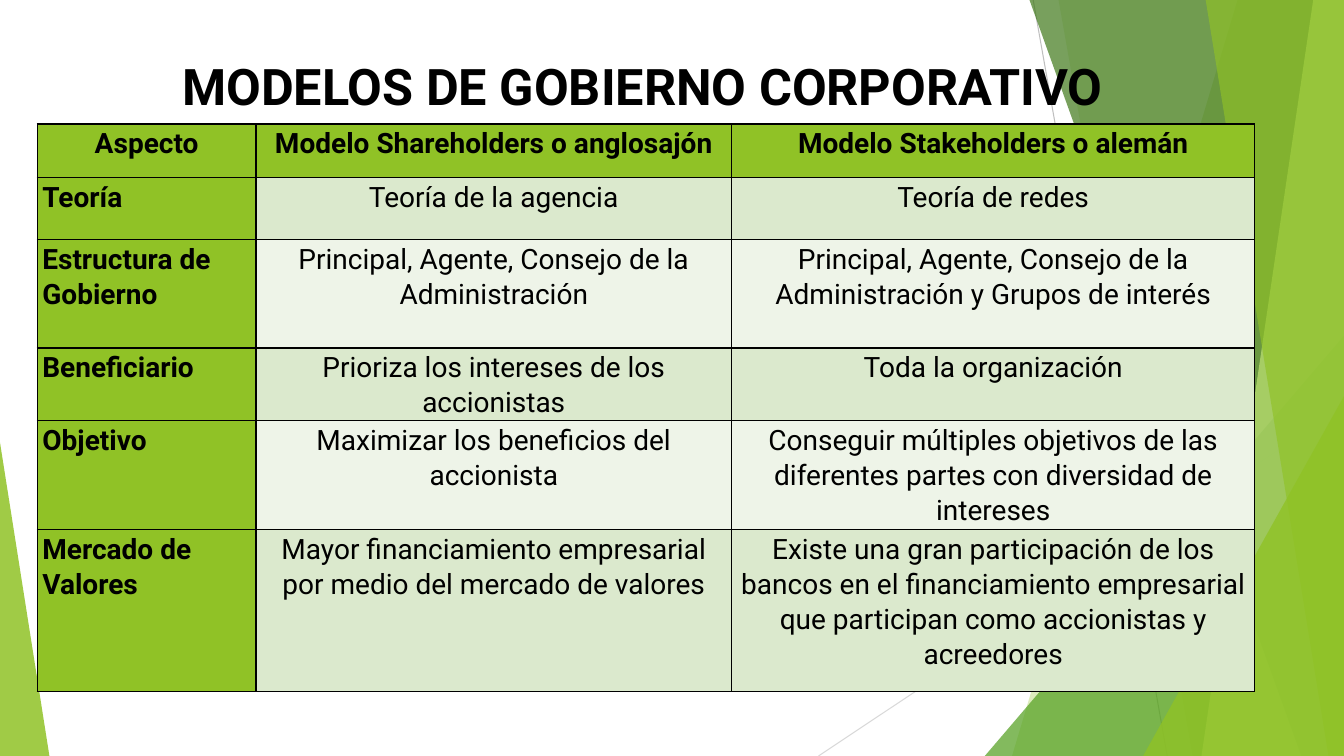
from dataclasses import dataclass
from typing import Optional, Union

from lxml import etree
from pptx import Presentation
from pptx import util as u
from pptx.dml.color import RGBColor
from pptx.enum import shapes, text
from pptx.oxml import ns


@dataclass(frozen=True)
class Theme:
    font: str = "Roboto"
    title_size: float = 36
    table_size: float = 20
    ink: str = "000000"
    green: str = "90C226"
    mid_green: str = "54A021"
    dark_green: str = "3F7819"
    light_green: str = "C0E474"
    row_tints: tuple[str, str] = ("DBE9CD", "EEF4E8")
    line_greys: tuple[str, str] = ("BFBFBF", "D9D9D9")


@dataclass(frozen=True)
class Band:
    """Four-sided facet that runs from top to bottom along the right edge."""
    top_x: float
    bottom_x: float
    color: str
    opacity: int


@dataclass(frozen=True)
class Wedge:
    """Triangle that stands on the bottom edge; apex is 0 (left) to 1 (right)."""
    left: float
    top: float
    width: float
    apex: float
    color: str
    opacity: int


@dataclass(frozen=True)
class Line:
    start: tuple[float, float]
    end: tuple[float, float]
    color: str


THEME = Theme()
WIDTH, HEIGHT = 960, 540
BAND_TOP = -0.72

LINES = [
    Line((738, 0), (833.76, HEIGHT), THEME.line_greys[0]),
    Line((WIDTH, 290.16), (584.64, HEIGHT), THEME.line_greys[1]),
]
FACETS: list[Union[Band, Wedge]] = [
    Band(884.16, 722.88, THEME.green, 30),
    Band(756, 851.76, THEME.green, 20),
    Wedge(703.44, 239.76, 256.56, 1, THEME.mid_green, 72),
    Band(735.12, 929.52, THEME.dark_green, 70),
    Band(938.16, 858.24, THEME.light_green, 70),
    Band(861.12, 948.96, THEME.green, 65),
    Wedge(816.48, 282.96, 143.52, 1, THEME.green, 80),
    Wedge(0, 316.08, 35.28, 0, THEME.green, 85),
]

TABLE_LEFT, TABLE_TOP = 26.64, 88.56
COLUMN_WIDTHS = [156.24, 339.84, 373.68]
ROW_HEIGHTS = [38.4, 44.4, 77.2, 51, 77.2, 115.8]
ROWS = [
    ("Aspecto", "Modelo Shareholders o anglosajón", "Modelo Stakeholders o alemán"),
    ("Teoría", "Teoría de la agencia", "Teoría de redes"),
    ("Estructura de Gobierno",
     "Principal, Agente, Consejo de la Administración",
     "Principal, Agente, Consejo de la Administración y Grupos de interés"),
    ("Beneficiario", "Prioriza los intereses de los accionistas", "Toda la organización"),
    ("Objetivo",
     "Maximizar los beneficios del accionista",
     "Conseguir múltiples objetivos de las diferentes partes con diversidad de intereses"),
    ("Mercado de Valores",
     "Mayor financiamiento empresarial por medio del mercado de valores",
     "Existe una gran participación de los bancos en el financiamiento empresarial "
     "que participan como accionistas y acreedores"),
]


def write_text(frame, content: str, *, size: float, bold: bool = False,
               align=text.PP_ALIGN.LEFT, spacing: Optional[float] = None,
               after: float = 0) -> None:
    frame.word_wrap = True
    paragraph = frame.paragraphs[0]
    paragraph.alignment = align
    paragraph.space_after = u.Pt(after)
    if spacing:
        paragraph.line_spacing = spacing
    run = paragraph.add_run()
    run.text = content
    run.font.name = THEME.font
    run.font.size = u.Pt(size)
    run.font.bold = bold
    run.font.color.rgb = RGBColor.from_string(THEME.ink)


def draw_line(slide, line: Line) -> None:
    connector = slide.shapes.add_connector(
        shapes.MSO_CONNECTOR.STRAIGHT, *(u.Pt(value) for value in line.start + line.end))
    connector.line.color.rgb = RGBColor.from_string(line.color)
    connector.line.width = u.Pt(0.75)
    properties = connector._element.find(ns.qn("p:spPr"))
    etree.SubElement(properties, ns.qn("a:effectLst"))


def draw_facet(slide, facet: Union[Band, Wedge]) -> None:
    if isinstance(facet, Band):
        corners = [(facet.top_x, BAND_TOP), (WIDTH, BAND_TOP),
                   (WIDTH, HEIGHT), (facet.bottom_x, HEIGHT)]
        points = [(u.Pt(x), u.Pt(y)) for x, y in corners]
        builder = slide.shapes.build_freeform(*points[0])
        builder.add_line_segments(points[1:], close=True)
        shape = builder.convert_to_shape()
    else:
        shape = slide.shapes.add_shape(
            shapes.MSO_SHAPE.ISOSCELES_TRIANGLE, u.Pt(facet.left), u.Pt(facet.top),
            u.Pt(facet.width), u.Pt(HEIGHT - facet.top))
        shape.adjustments[0] = facet.apex
    shape.shadow.inherit = False
    shape.line.fill.background()
    shape.fill.solid()
    shape.fill.fore_color.rgb = RGBColor.from_string(facet.color)
    color = shape._element.find(".//" + ns.qn("a:srgbClr"))
    etree.SubElement(color, ns.qn("a:alpha"), val=str(facet.opacity * 1000))


def draw_title(slide) -> None:
    title = slide.shapes.add_textbox(u.Pt(123.12), u.Pt(36), u.Pt(676.8), u.Pt(103.68))
    write_text(title.text_frame, "MODELOS DE GOBIERNO CORPORATIVO",
               size=THEME.title_size, bold=True)


def add_borders(cell) -> None:
    properties = cell._tc.get_or_add_tcPr()
    for index, side in enumerate(("lnL", "lnR", "lnT", "lnB")):
        border = etree.Element(ns.qn("a:" + side), w=str(u.Pt(1)))
        fill = etree.SubElement(border, ns.qn("a:solidFill"))
        etree.SubElement(fill, ns.qn("a:srgbClr"), val=THEME.ink)
        properties.insert(index, border)


def draw_table(slide) -> None:
    table = slide.shapes.add_table(
        len(ROWS), len(COLUMN_WIDTHS), u.Pt(TABLE_LEFT), u.Pt(TABLE_TOP),
        u.Pt(sum(COLUMN_WIDTHS)), u.Pt(sum(ROW_HEIGHTS))).table
    table.horz_banding = False
    for column, width in zip(table.columns, COLUMN_WIDTHS):
        column.width = u.Pt(width)
    for r, (contents, height) in enumerate(zip(ROWS, ROW_HEIGHTS)):
        table.rows[r].height = u.Pt(height)
        for c, content in enumerate(contents):
            cell = table.cell(r, c)
            heading = r == 0 or c == 0
            cell.margin_left = cell.margin_right = u.Pt(3.6)
            cell.margin_top, cell.margin_bottom = u.Pt(0.72), 0
            cell.fill.solid()
            cell.fill.fore_color.rgb = RGBColor.from_string(
                THEME.green if heading else THEME.row_tints[(r - 1) % 2])
            add_borders(cell)
            side_label = c == 0 and r > 0
            write_text(cell.text_frame, content, size=THEME.table_size, bold=heading,
                       align=text.PP_ALIGN.LEFT if side_label else text.PP_ALIGN.CENTER,
                       spacing=1.07, after=8)


def main() -> None:
    presentation = Presentation()
    presentation.slide_width, presentation.slide_height = u.Pt(WIDTH), u.Pt(HEIGHT)
    slide = presentation.slides.add_slide(presentation.slide_layouts[6])
    # Background decoration
    for line in LINES:
        draw_line(slide, line)
    for facet in FACETS:
        draw_facet(slide, facet)
    # Heading and comparison table
    draw_title(slide)
    draw_table(slide)
    presentation.save("out.pptx")


if __name__ == "__main__":
    main()
